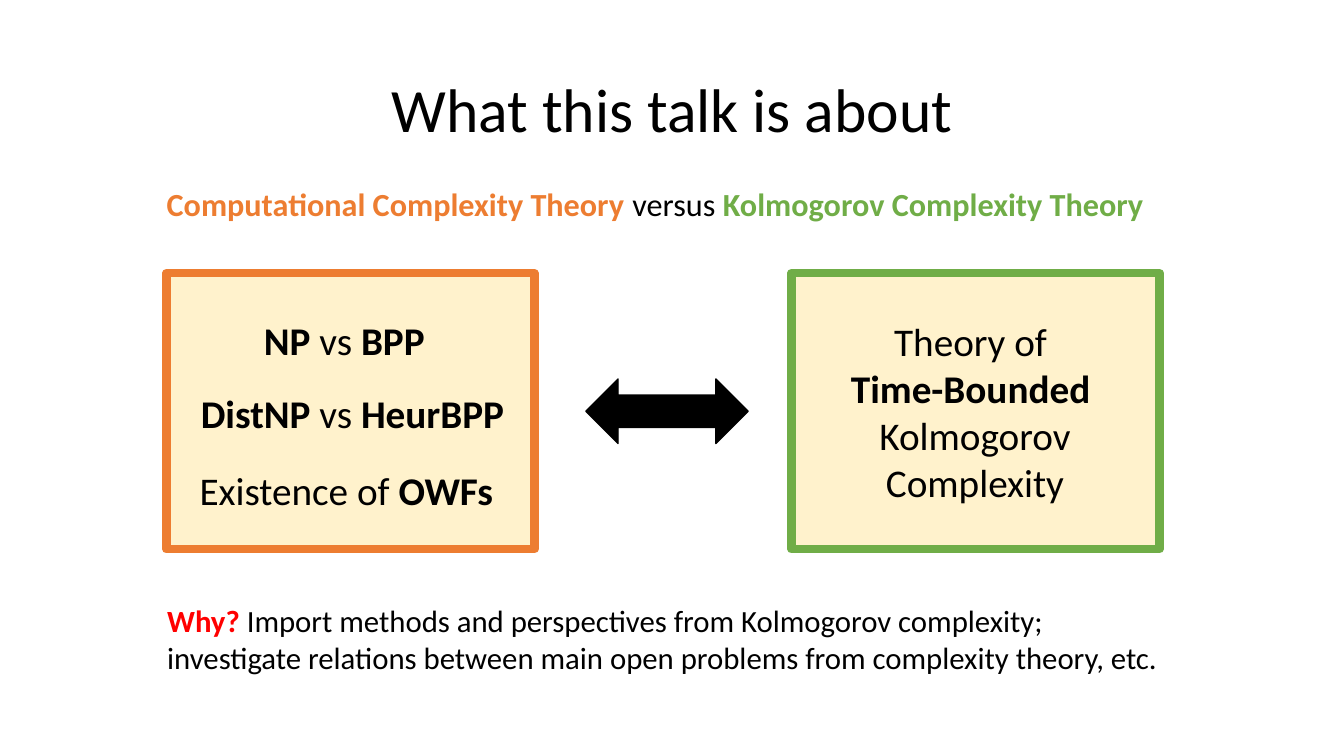
from pptx import Presentation
from pptx.dml.color import RGBColor
from pptx.enum.shapes import MSO_SHAPE
from pptx.enum.text import MSO_ANCHOR, PP_ALIGN
from pptx.util import Emu, Pt

PX = 9144  # EMU per px, 100 px to the inch
FONT = "Calibri"
COLOURS = {
    "text": "000000",
    "computational": "ED7D31",
    "kolmogorov": "70AD47",
    "panel": "FFF2CC",
    "why": "FF0000",
}


def px(*lengths):
    return [Emu(length * PX) for length in lengths]


def colour(name):
    return RGBColor.from_string(COLOURS[name])


def span(text, bold=False, tint="text"):
    return text, bold, tint


def add_text(shapes, place, *paragraphs, size=28, align=PP_ALIGN.CENTER,
             anchor=MSO_ANCHOR.TOP, line_spacing=None):
    """Add a text box; each paragraph is a list of spans."""
    box = shapes.add_textbox(*px(*place))
    frame = box.text_frame
    frame.word_wrap = True
    frame.vertical_anchor = anchor
    for index, spans in enumerate(paragraphs):
        para = frame.add_paragraph() if index else frame.paragraphs[0]
        para.alignment = align
        para.line_spacing = line_spacing
        for text, bold, tint in spans:
            run = para.add_run()
            run.text = text
            run.font.name = FONT
            run.font.size = Pt(size)
            run.font.bold = bold
            run.font.color.rgb = colour(tint)
    return box


def add_block(shapes, kind, place, fill, line, line_width):
    block = shapes.add_shape(kind, *px(*place))
    block.shadow.inherit = False
    block.fill.solid()
    block.fill.fore_color.rgb = colour(fill)
    block.line.color.rgb = colour(line)
    block.line.width = Pt(line_width)
    return block


def add_panel(page, left, border):
    """Add a framed panel and return the shapes of its group."""
    shapes = page.shapes.add_group_shape().shapes
    add_block(shapes, MSO_SHAPE.RECTANGLE, (left, 271, 365, 274),
              "panel", border, 6)
    return shapes


def main():
    deck = Presentation()
    deck.slide_width, deck.slide_height = px(1333, 750)
    page = deck.slides.add_slide(deck.slide_layouts[6])

    add_text(page.shapes, (92, 39, 1150, 145),
             [span("What this talk is about")],
             size=44, anchor=MSO_ANCHOR.MIDDLE, line_spacing=0.9)
    add_text(page.shapes, (75, 178, 1150, 50),
             [span("Computational Complexity Theory ", True, "computational"),
              span("versus "),
              span("Kolmogorov Complexity Theory", True, "kolmogorov")],
             size=23)

    problems = add_panel(page, 165, "computational")
    add_text(problems, (221, 309, 241, 57),
             [span("NP", True), span(" vs "), span("BPP", True)])
    add_text(problems, (182, 381, 335, 57),
             [span("DistNP", True), span(" vs "), span("HeurBPP", True)])
    add_text(problems, (187, 458, 313, 57),
             [span("Existence of "), span("OWFs", True)])

    add_block(page.shapes, MSO_SHAPE.LEFT_RIGHT_ARROW, (581, 376, 161, 64),
              "text", "text", 1)

    theory = add_panel(page, 785, "kolmogorov")
    add_text(theory, (793, 310, 348, 134),
             [span("Theory of ")],
             [span("Time-Bounded ", True)],
             [span("Kolmogorov Complexity")])

    add_text(page.shapes, (156, 592, 1012, 84),
             [span("Why? ", True, "why"),
              span("Import methods and perspectives from Kolmogorov complexity; "
                   "investigate relations between main open problems from "
                   "complexity theory, etc.")],
             size=22, align=PP_ALIGN.LEFT)

    deck.save("out.pptx")


if __name__ == "__main__":
    main()
